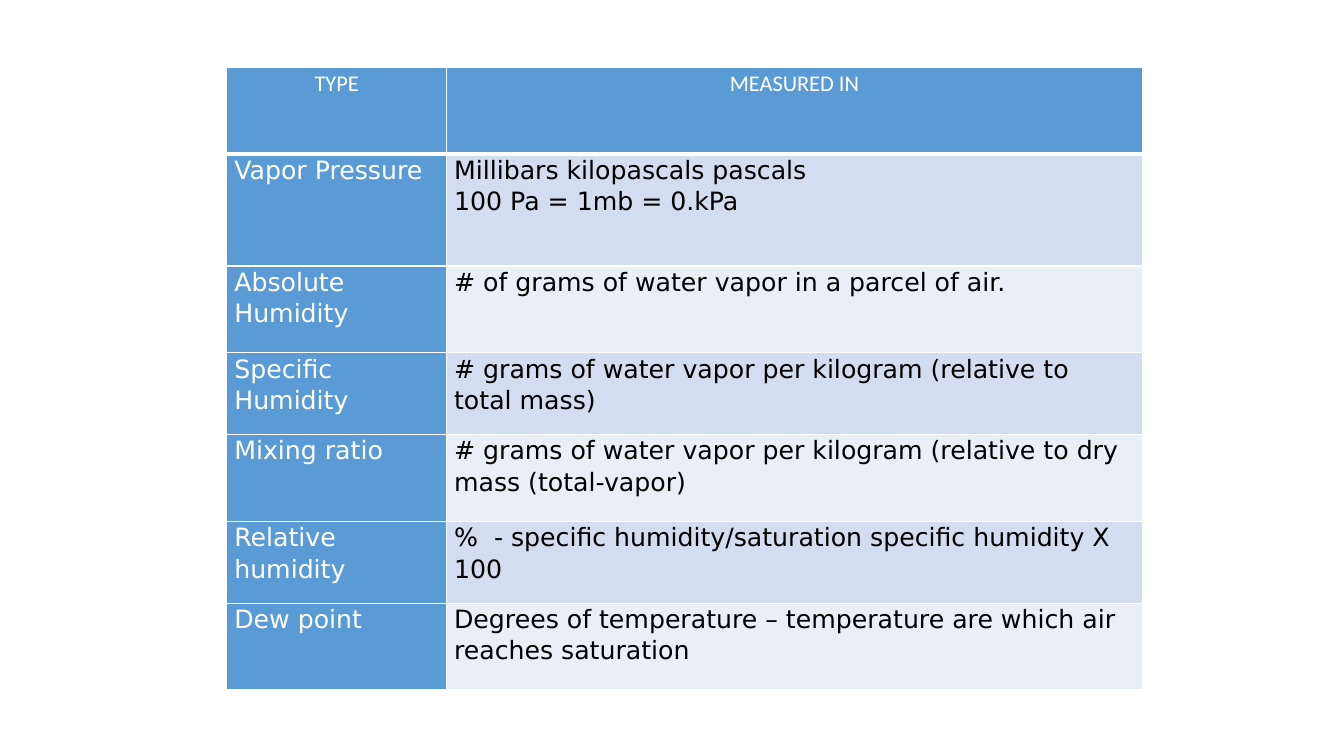
"""Build a slide with a table of humidity measures and their units."""
from lxml import etree
from pptx import Presentation
from pptx.dml.color import RGBColor
from pptx.enum import text
from pptx.oxml import ns
from pptx.util import Pt

HUES = {"blue": "5B9BD5", "band": "D2DEEF", "pale": "EAEFF7",
        "white": "FFFFFF", "black": "000000"}
COLS = [157, 497]
ROWS = [61.5, 80, 62, 58.5, 62, 58.5, 62]
HEAD = ("TYPE", "MEASURED IN")
BODY = [
    ("Vapor Pressure", "Millibars kilopascals pascals\n100 Pa = 1mb = 0.kPa"),
    ("Absolute Humidity", "# of grams of water vapor in a parcel of air."),
    ("Specific Humidity",
     "# grams of water vapor per kilogram (relative to total mass)"),
    ("Mixing ratio",
     "# grams of water vapor per kilogram (relative to dry mass (total-vapor)"),
    ("Relative humidity",
     "%  - specific humidity/saturation specific humidity X 100"),
    ("Dew point",
     "Degrees of temperature – temperature are which air reaches saturation"),
]


def edge(cell, base):
    """Draw white borders round a cell, with its own width at the base."""
    props = cell._tc.get_or_add_tcPr()
    for side, size in zip("LRTB", (1, 1, 1, base)):
        line = etree.SubElement(props, ns.qn(f"a:ln{side}"), w=str(Pt(size)))
        fill = etree.SubElement(line, ns.qn("a:solidFill"))
        etree.SubElement(fill, ns.qn("a:srgbClr"), val=HUES["white"])


def write(cell, words, fill, ink, face, size, align):
    """Fill a cell and set its words."""
    cell.fill.solid()
    cell.fill.fore_color.rgb = RGBColor.from_string(HUES[fill])
    cell.margin_left = cell.margin_right = Pt(5.4)
    cell.margin_top = cell.margin_bottom = 0
    cell.text_frame.text = words
    for para in cell.text_frame.paragraphs:
        para.alignment = align
        para.line_spacing = 1.07
        for run in para.runs:
            font = run.font
            font.name, font.size, font.bold = face, Pt(size), False
            font.color.rgb = RGBColor.from_string(HUES[ink])


def add_grid(slide):
    """Add the table and size its columns and rows."""
    frame = slide.shapes.add_table(len(ROWS), len(COLS), Pt(162), Pt(48.5),
                                   Pt(sum(COLS)), Pt(sum(ROWS)))
    grid = frame.table
    grid.horz_banding = False
    for col, width in zip(grid.columns, COLS):
        col.width = Pt(width)
    for row, height in zip(grid.rows, ROWS):
        row.height = Pt(height)
    return grid


def main():
    """Build and save the slide."""
    deck = Presentation()
    deck.slide_width, deck.slide_height = Pt(960), Pt(540)
    grid = add_grid(deck.slides.add_slide(deck.slide_layouts[6]))
    for r, pair in enumerate([HEAD] + BODY):
        for c, words in enumerate(pair):
            cell = grid.cell(r, c)
            edge(cell, 1 if r else 3)
            if r == 0:
                write(cell, words, "blue", "white", "Calibri", 16,
                      text.PP_ALIGN.CENTER)
            else:
                tint = "band" if r % 2 else "pale"
                fill, ink = (tint, "black") if c else ("blue", "white")
                write(cell, words, fill, ink, "DejaVu Sans", 18,
                      text.PP_ALIGN.LEFT)
    deck.save("out.pptx")


if __name__ == "__main__":
    main()
